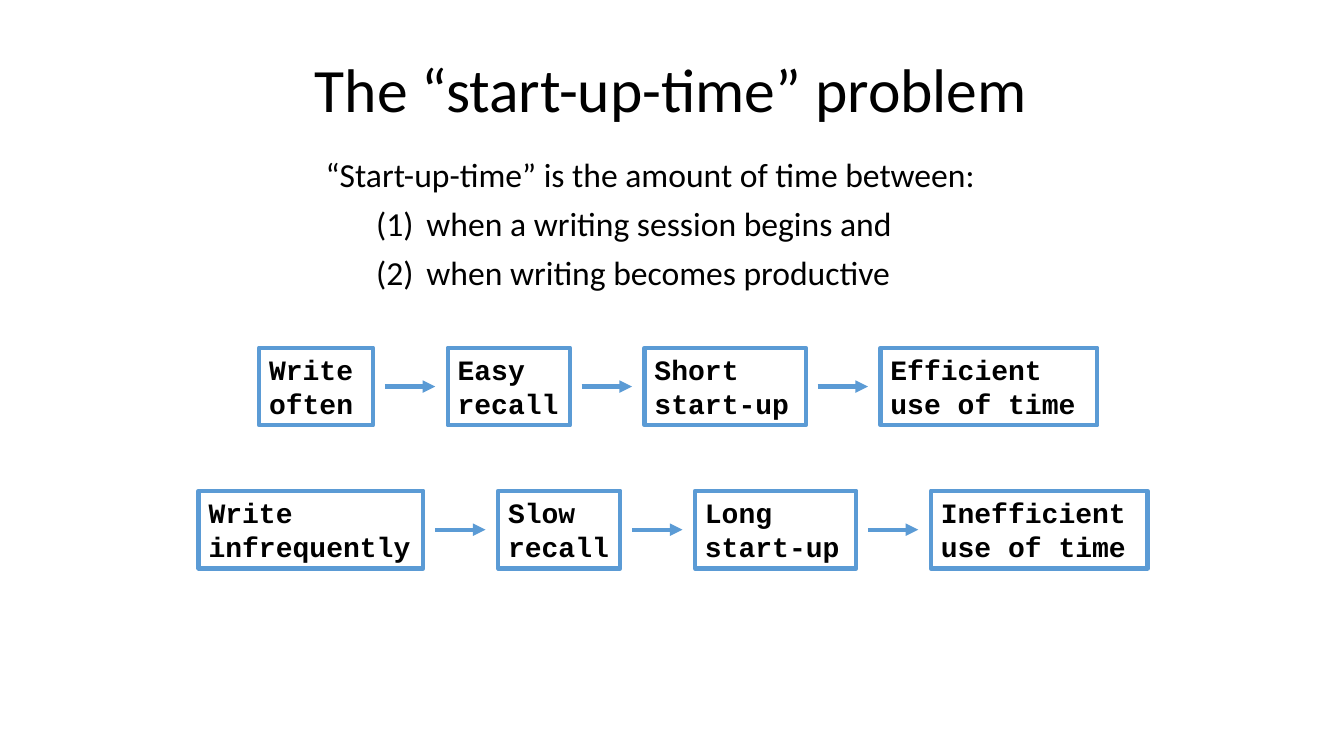
from dataclasses import dataclass

from lxml import etree
from pptx import Presentation
from pptx.dml.color import RGBColor
from pptx.enum.shapes import MSO_CONNECTOR, MSO_SHAPE
from pptx.enum.text import MSO_ANCHOR, MSO_AUTO_SIZE, PP_ALIGN
from pptx.oxml.ns import qn
from pptx.shapes.autoshape import Shape
from pptx.shapes.group import GroupShape
from pptx.slide import Slide
from pptx.text.text import _Paragraph as Paragraph
from pptx.util import Inches, Length, Pt

RECTANGLE = MSO_SHAPE.RECTANGLE
STRAIGHT = MSO_CONNECTOR.STRAIGHT
CENTER, LEFT = PP_ALIGN.CENTER, PP_ALIGN.LEFT
MIDDLE, TOP = MSO_ANCHOR.MIDDLE, MSO_ANCHOR.TOP
FIXED_SIZE = MSO_AUTO_SIZE.NONE

COLORS = {"text": "000000", "flow": "5B9BD5"}
BODY_FONT, BOX_FONT = "Calibri", "Courier New"
SLIDE_WIDTH, SLIDE_HEIGHT = Inches(13.33), Inches(7.5)
LINE_WIDTH = Pt(3)

BOX_WIDTH_SHARES = {"often": 8.48, "infrequently": 16.73, "recall": 9.1, "start-up": 12, "time": 16.13}
BOX_HEIGHT = 10.27
BOX_GAP = 5.55
ARROW_OFFSET = 0.87
ARROW_LENGTH = 3.75


@dataclass(frozen=True)
class Flow:
    left: float
    top: float
    steps: tuple[str, ...]


FLOWS = (
    Flow(19.28, 46, ("Write often", "Easy recall", "Short start-up", "Efficient use of time")),
    Flow(14.78, 64.93, ("Write infrequently", "Slow recall", "Long start-up", "Inefficient use of time")),
)
TITLE = "The “start-up-time” problem"
INTRODUCTION = "“Start-up-time” is the amount of time between:"
MOMENTS = ("when a writing session begins and", "when writing becomes productive")


def across(share: float) -> Length:
    return Length(round(SLIDE_WIDTH * share / 100))


def down(share: float) -> Length:
    return Length(round(SLIDE_HEIGHT * share / 100))


def color(name: str) -> RGBColor:
    return RGBColor.from_string(COLORS[name])


def place(shape: Shape, left: float, top: float, width: float, height: float) -> None:
    shape.left, shape.top = across(left), down(top)
    shape.width, shape.height = across(width), down(height)


def format_runs(paragraph: Paragraph, font_name: str, size: int, bold: bool = False) -> None:
    for run in paragraph.runs:
        run.font.name = font_name
        run.font.size = Pt(size)
        run.font.bold = bold
        run.font.color.rgb = color("text")


def set_list_style(paragraph: Paragraph, numbered: bool) -> None:
    properties = paragraph._p.get_or_add_pPr()
    properties.set("marL", str(Inches(1) if numbered else 0))
    properties.set("indent", str(Inches(-0.5) if numbered else 0))
    if numbered:
        bullet_font = etree.SubElement(properties, qn("a:buFont"))
        bullet_font.set("typeface", "+mj-lt")
        numbering = etree.SubElement(properties, qn("a:buAutoNum"))
        numbering.set("type", "arabicParenBoth")
    else:
        etree.SubElement(properties, qn("a:buNone"))


def fill_title(slide: Slide) -> None:
    title = slide.shapes.title
    place(title, 17.63, 5.73, 64.65, 13.07)
    frame = title.text_frame
    frame.text = TITLE
    frame.auto_size = FIXED_SIZE
    frame.vertical_anchor = MIDDLE
    paragraph = frame.paragraphs[0]
    paragraph.alignment = CENTER
    paragraph.line_spacing = 0.9
    format_runs(paragraph, BODY_FONT, 44)


def fill_body(slide: Slide) -> None:
    body = slide.placeholders[1]
    place(body, 23.48, 19.73, 51, 24.4)
    frame = body.text_frame
    frame.text = "\n".join((INTRODUCTION, *MOMENTS))
    frame.auto_size = FIXED_SIZE
    frame.vertical_anchor = TOP
    for index, paragraph in enumerate(frame.paragraphs):
        numbered = index > 0
        paragraph.level = int(numbered)
        paragraph.space_before = Pt(6)
        set_list_style(paragraph, numbered)
        format_runs(paragraph, BODY_FONT, 24)


def draw_box(group: GroupShape, text: str, left: float, top: float, width: float) -> None:
    box = group.shapes.add_shape(RECTANGLE, across(left), down(top), across(width), down(BOX_HEIGHT))
    box.shadow.inherit = False
    box.fill.background()
    box.line.color.rgb = color("flow")
    box.line.width = LINE_WIDTH
    frame = box.text_frame
    frame.word_wrap = True
    frame.vertical_anchor = TOP
    frame.text = text
    paragraph = frame.paragraphs[0]
    paragraph.alignment = LEFT
    format_runs(paragraph, BOX_FONT, 20, bold=True)


def draw_arrow(group: GroupShape, left: float, middle: float) -> None:
    arrow = group.shapes.add_connector(
        STRAIGHT, across(left), down(middle), across(left + ARROW_LENGTH), down(middle)
    )
    arrow.line.color.rgb = color("flow")
    arrow.line.width = LINE_WIDTH
    head = etree.SubElement(arrow.line._get_or_add_ln(), qn("a:tailEnd"))
    head.set("type", "triangle")
    etree.SubElement(arrow._element.spPr, qn("a:effectLst"))


def draw_flow(slide: Slide, flow: Flow) -> None:
    group = slide.shapes.add_group_shape()
    left = flow.left
    for index, step in enumerate(flow.steps):
        if index:
            draw_arrow(group, left - BOX_GAP + ARROW_OFFSET, flow.top + BOX_HEIGHT / 2)
        width = BOX_WIDTH_SHARES[step.split()[-1]]
        draw_box(group, step, left, flow.top, width)
        left += width + BOX_GAP


def main() -> None:
    presentation = Presentation()
    presentation.slide_width, presentation.slide_height = SLIDE_WIDTH, SLIDE_HEIGHT
    slide = presentation.slides.add_slide(presentation.slide_layouts[1])
    fill_title(slide)
    fill_body(slide)
    for flow in FLOWS:
        draw_flow(slide, flow)
    presentation.save("out.pptx")


if __name__ == "__main__":
    main()
